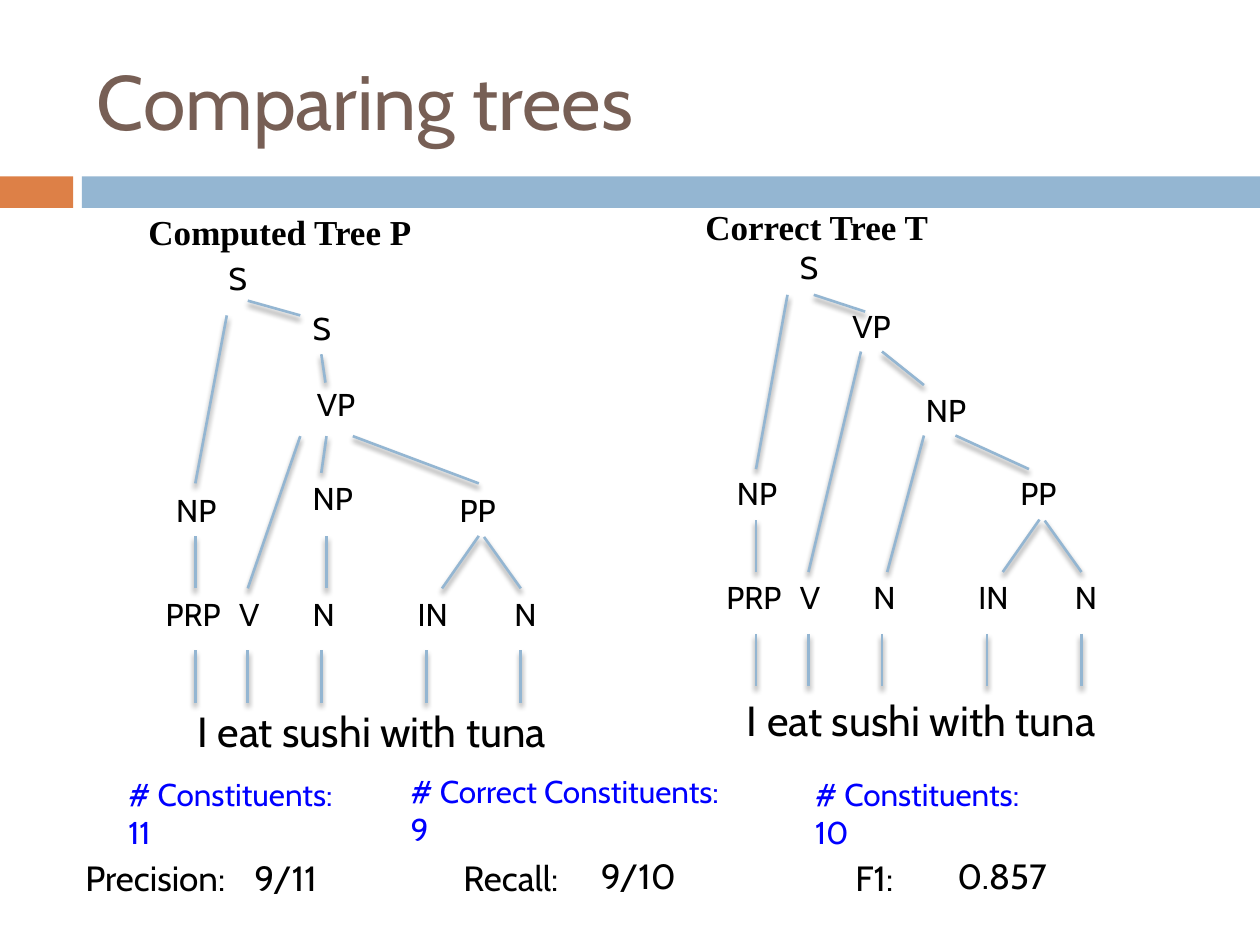
from typing import NamedTuple

from lxml.etree import SubElement
from pptx import Presentation
from pptx.dml.color import RGBColor
from pptx.enum.shapes import MSO_CONNECTOR, MSO_SHAPE
from pptx.enum.text import MSO_ANCHOR
from pptx.oxml.ns import qn
from pptx.util import Inches, Pt

COLORS = {
    "title": "775F55", "orange": "DD8047", "blue": "94B6D2",
    "black": "000000", "count": "0000FF",
}
CELL = 1 / 12  # inches; the trees sit on a grid of twelve cells to the inch
TAG_WIDTH, TAG_HEIGHT = 0.7, 0.4


class Tag(NamedTuple):
    text: str
    column: float
    row: float


class Branch(NamedTuple):
    start: tuple[float, float]
    end: tuple[float, float]


class Tree(NamedTuple):
    """Grid cells are counted from the top of the stem line of the first word."""
    left: float
    top: float
    tags: list[Tag]
    branches: list[Branch]


class Label(NamedTuple):
    text: str
    left: float
    top: float
    width: float


# Parts that both trees share: word tags, outer phrases and lower branches
SHARED_TAGS = [
    Tag("PRP", -4, 0), Tag("V", 3, 0), Tag("N", 10, 0), Tag("IN", 20, 0),
    Tag("N", 29.2, 0), Tag("NP", -3, -9.9), Tag("PP", 24, -9.9),
]
SHARED_BRANCHES = [Branch((column, 5.9), (column, 10.9)) for column in (0, 5, 12, 22, 31)] + [
    Branch((0, 0), (0, -5)),
    Branch((23.5, 0), (27, -5)),
    Branch((31, 0), (27.5, -4.9)),
]

TREES = [
    Tree(
        1.55, 4.67,
        [Tag("S", 2, -32), Tag("S", 10, -27.2), Tag("VP", 10.4, -20), Tag("NP", 10, -11)],
        [
            Branch((0, -10), (3, -26)),
            Branch((10, -26), (5, -27.4)),
            Branch((12.4, -19.6), (12, -22.3)),
            Branch((5, 0), (10, -14.5)),
            Branch((12, -11), (12.5, -14.5)),
            Branch((27, -10), (15, -14.5)),
            Branch((12.5, 0), (12.5, -5)),
        ],
    ),
    Tree(
        6, 4.54,
        [Tag("S", 3, -31.4), Tag("VP", 8, -25.8), Tag("NP", 15, -17.8)],
        [
            Branch((0, -9.8), (3, -26.4)),
            Branch((10.4, -24.8), (5.5, -26.4)),
            Branch((5, 0), (10, -21)),
            Branch((16, -17.8), (12, -21)),
            Branch((12.5, 0), (16, -13)),
            Branch((26, -9.8), (19, -13)),
        ],
    ),
]

HEADINGS = [Label("Computed Tree P", 1.08, 1.62, 2.3), Label("Correct Tree T", 5.5, 1.58, 2.3)]
SENTENCES = [
    Label("I eat sushi with tuna", 1.47, 5.55, 4.08),
    Label("I eat sushi with tuna", 5.83, 5.46, 4.08),
]
COUNTS = [
    Label("# Constituents: 11", 0.92, 6.1, 2.01),
    Label("# Correct Constituents: 9", 3.16, 6.08, 2.68),
    Label("# Constituents: 10", 6.37, 6.1, 2.01),
]
SCORES = [
    Label("Precision:", 0.58, 6.75, 1.36), Label("9/11", 1.92, 6.75, 1.36),
    Label("Recall:", 3.58, 6.75, 1.11), Label("9/10", 4.67, 6.73, 1.36),
    Label("F1:", 6.69, 6.75, 0.63), Label("0.857", 7.5, 6.73, 1.36),
]


def add_text(page, text: str, left: float, top: float, width: float, *, height: float = 0.44,
             size: float = 18, color: str = "black", font: str = "Cabin",
             bold: bool = False, anchor=MSO_ANCHOR.TOP) -> None:
    box = page.shapes.add_textbox(Inches(left), Inches(top), Inches(width), Inches(height))
    frame = box.text_frame
    frame.word_wrap = True
    frame.vertical_anchor = anchor
    span = frame.paragraphs[0].add_run()
    span.text = text
    span.font.name = font
    span.font.size = Pt(size)
    span.font.bold = bold
    span.font.color.rgb = RGBColor.from_string(COLORS[color])


def add_labels(page, labels: list[Label], **style) -> None:
    for label in labels:
        add_text(page, *label, **style)


def add_bar(page, left: float, width: float, color: str) -> None:
    bar = page.shapes.add_shape(
        MSO_SHAPE.RECTANGLE, Inches(left), Inches(1.4), Inches(width), Inches(0.25))
    bar.shadow.inherit = False
    bar.fill.solid()
    bar.fill.fore_color.rgb = RGBColor.from_string(COLORS[color])
    bar.line.fill.background()


def add_branch(page, tree: Tree, branch: Branch) -> None:
    ends = [
        Inches(origin + cells * CELL)
        for point in branch
        for origin, cells in zip((tree.left, tree.top), point)
    ]
    line = page.shapes.add_connector(MSO_CONNECTOR.STRAIGHT, *ends)
    line.line.color.rgb = RGBColor.from_string(COLORS["blue"])
    line.line.width = Pt(1.5)
    # Soft shadow straight below the line
    effects = SubElement(line._element.spPr, qn("a:effectLst"))
    shadow = SubElement(effects, qn("a:outerShdw"), blurRad=str(Pt(3)), dist=str(Pt(2.4)),
                        dir="5400000", rotWithShape="0")
    tint = SubElement(shadow, qn("a:srgbClr"), val=COLORS["black"])
    SubElement(tint, qn("a:alpha"), val="45000")


def add_tree(page, tree: Tree) -> None:
    for branch in SHARED_BRANCHES + tree.branches:
        add_branch(page, tree, branch)
    for tag in SHARED_TAGS + tree.tags:
        add_text(page, tag.text, tree.left + tag.column * CELL, tree.top + tag.row * CELL,
                 TAG_WIDTH, height=TAG_HEIGHT)


def main() -> None:
    deck = Presentation()
    deck.slide_width, deck.slide_height = Inches(10), Inches(7.5)
    page = deck.slides.add_slide(deck.slide_layouts[6])

    # Title and divider
    add_bar(page, 0, 0.58, "orange")
    add_bar(page, 0.65, 9.35, "blue")
    add_text(page, "Comparing trees", 0.67, 0.25, 8.92, height=1.08, size=44,
             color="title", anchor=MSO_ANCHOR.MIDDLE)

    # Trees with their headings and sentences
    add_labels(page, HEADINGS, size=20, font="Times New Roman", bold=True)
    for tree in TREES:
        add_tree(page, tree)
    add_labels(page, SENTENCES, size=24, height=0.5)

    # Counts and scores
    add_labels(page, COUNTS, color="count", height=0.4)
    add_labels(page, SCORES, size=20)
    deck.save("out.pptx")


if __name__ == "__main__":
    main()
